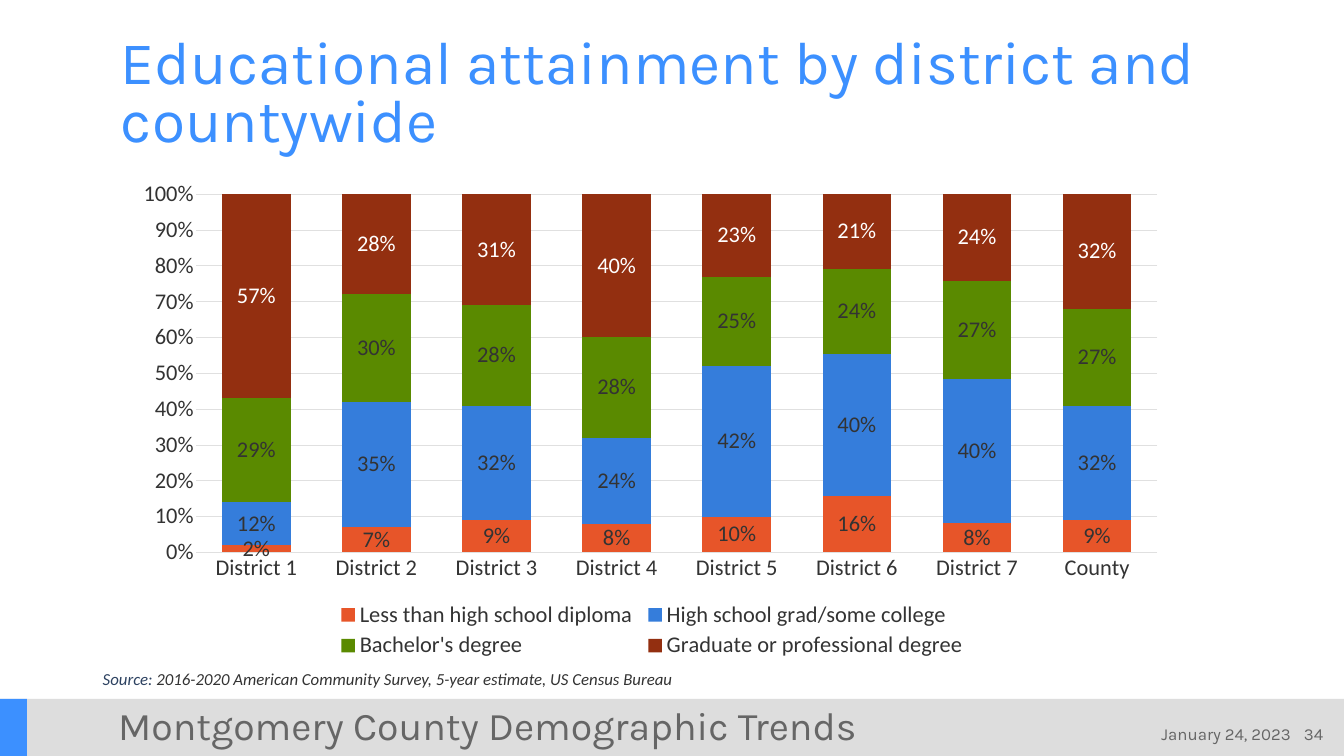
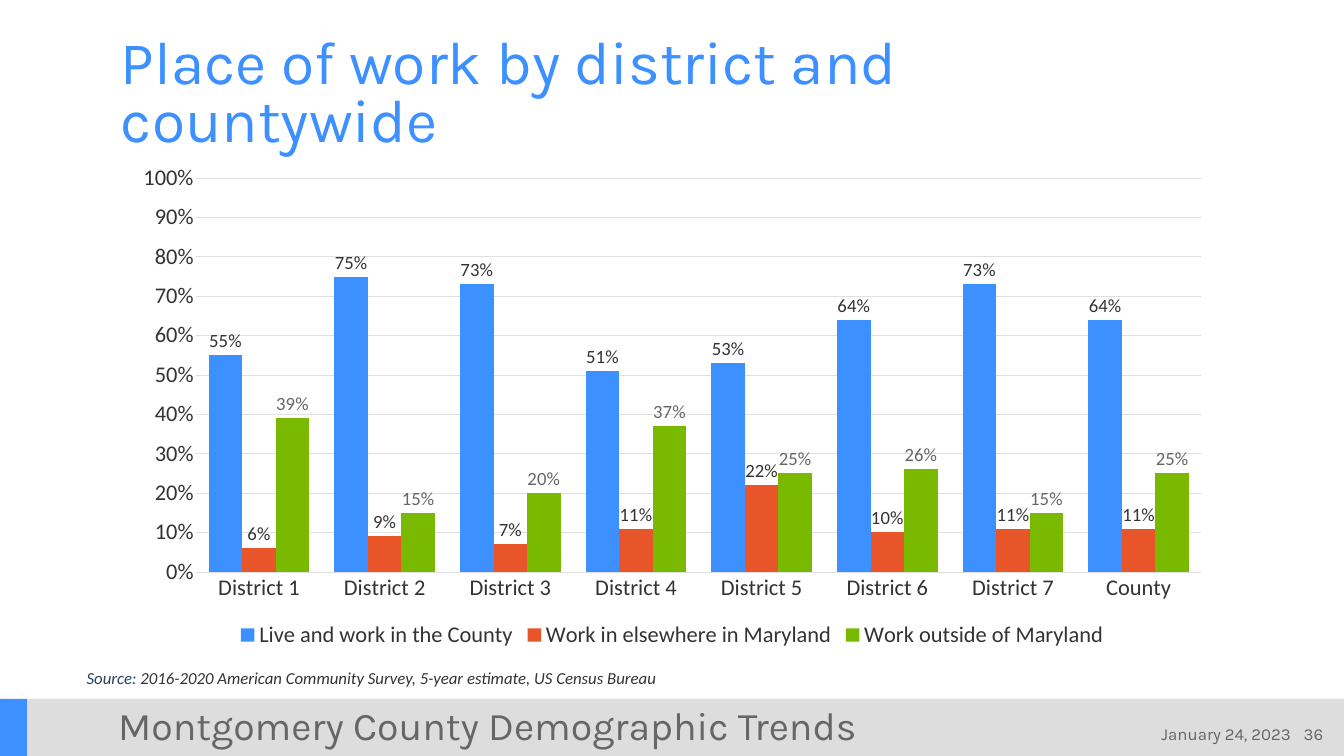
from dataclasses import dataclass

from lxml import etree
from pptx import Presentation
from pptx import util as u
from pptx.chart.data import CategoryChartData
from pptx.dml.color import RGBColor
from pptx.enum import chart as ch
from pptx.enum import shapes, text
from pptx.oxml.ns import qn

PX = 9144  # 100 px to the inch


@dataclass(frozen=True)
class Theme:
    heading_font: str = "Karla"
    body_font: str = "Calibri"
    blue: str = "3C90FF"
    steel: str = "357DDB"
    orange: str = "E75529"
    green: str = "5A8A00"
    lime: str = "79BA00"
    rust: str = "932F10"
    navy: str = "2D4261"
    ink: str = "333333"
    grey: str = "666666"
    band: str = "DDDDDD"
    rule: str = "E0E0E0"
    white: str = "FFFFFF"
    title_size: float = 64.8
    footer_size: int = 42
    chart_size: int = 24
    label_size: int = 20
    small_size: int = 18


DISTRICTS = [f"District {n}" for n in range(1, 8)] + ["County"]
FOOTER = "Montgomery County Demographic Trends"
DATE = "January 24, 2023"
SOURCE = "2016-2020 American Community Survey, 5-year estimate, US Census Bureau"


def px(*lengths):
    return [u.Emu(length * PX) for length in lengths]


def set_layout(parent, index, frame, area, inner=False):
    """Place a chart part at area, both rectangles in px on the slide."""
    for old in parent.findall(qn("c:layout")):
        parent.remove(old)
    layout = etree.Element(qn("c:layout"))
    manual = etree.SubElement(layout, qn("c:manualLayout"))
    if inner:
        etree.SubElement(manual, qn("c:layoutTarget"), val="inner")
    for side in "xy":
        etree.SubElement(manual, qn(f"c:{side}Mode"), val="edge")
    left, top, width, height = frame
    fractions = {
        "x": (area[0] - left) / width,
        "y": (area[1] - top) / height,
        "w": area[2] / width,
        "h": area[3] / height,
    }
    for name, value in fractions.items():
        etree.SubElement(manual, qn(f"c:{name}"), val=f"{value:.4f}")
    parent.insert(index, layout)


class Slides:
    def __init__(self, theme):
        self.theme = theme
        self.deck = Presentation()
        self.deck.slide_width, self.deck.slide_height = px(2000, 1125)
        self.page = None

    def style(self, font, size, color, face=None):
        font.name = face or self.theme.body_font
        font.size = u.Pt(size)
        font.color.rgb = RGBColor.from_string(color)

    def span(self, para, words, size, color, face=None, italic=None):
        span = para.add_run()
        span.text = words
        self.style(span.font, size, color, face)
        span.font.italic = italic

    def new_page(self, title, number):
        self.page = self.deck.slides.add_slide(self.deck.slide_layouts[5])
        self.title(title)
        self.footer(number)

    def title(self, words):
        box = self.page.shapes.title
        box.left, box.top, box.width, box.height = px(180, 50, 1640, 180)
        frame = box.text_frame
        frame.auto_size = text.MSO_AUTO_SIZE.NONE
        frame.word_wrap = True
        frame.vertical_anchor = text.MSO_ANCHOR.BOTTOM
        frame.margin_left, frame.margin_top, frame.margin_right, frame.margin_bottom = px(0, 5, 10, 0)
        para = frame.paragraphs[0]
        para.alignment = text.PP_ALIGN.LEFT
        para.line_spacing = 0.8
        self.span(para, words, self.theme.title_size, self.theme.blue, self.theme.heading_font)

    def band(self, area, color):
        band = self.page.shapes.add_shape(shapes.MSO_SHAPE.RECTANGLE, *px(*area))
        band.shadow.inherit = False
        band.fill.solid()
        band.fill.fore_color.rgb = RGBColor.from_string(color)
        band.line.fill.background()

    def footer_text(self, words, area, size, anchor, align):
        frame = self.page.shapes.add_textbox(*px(*area)).text_frame
        frame.word_wrap = True
        frame.margin_left = frame.margin_top = frame.margin_right = frame.margin_bottom = 0
        frame.vertical_anchor = anchor
        para = frame.paragraphs[0]
        para.alignment = align
        self.span(para, words, size, self.theme.grey, self.theme.heading_font)

    def footer(self, number):
        t = self.theme
        self.band((0, 1040, 2000, 85), t.band)
        self.band((0, 1040, 40, 85), t.blue)
        self.footer_text(FOOTER, (176, 1049, 1640, 60), t.footer_size,
                         text.MSO_ANCHOR.MIDDLE, text.PP_ALIGN.LEFT)
        for words, area in ((str(number), (1872, 1082, 97, 25)),
                            (DATE, (1640, 1082, 281, 25))):
            self.footer_text(words, area, t.small_size,
                             text.MSO_ANCHOR.BOTTOM, text.PP_ALIGN.RIGHT)

    def source(self, left, top, width):
        t = self.theme
        frame = self.page.shapes.add_textbox(*px(left, top, width, 71)).text_frame
        frame.word_wrap = True
        frame.auto_size = text.MSO_AUTO_SIZE.SHAPE_TO_FIT_TEXT
        para = frame.paragraphs[0]
        self.span(para, "Source: ", t.small_size, t.navy, italic=True)
        self.span(para, SOURCE, t.small_size, t.ink, italic=True)

    def chart(self, kind, frame, plot_area, series, label_size, label_place,
              overlap=0, legend_area=None):
        """Column chart; series holds (name, percentages, fill, label colour)."""
        t = self.theme
        data = CategoryChartData(number_format="0%")
        data.categories = DISTRICTS
        for name, percentages, _, _ in series:
            data.add_series(name, [value / 100 for value in percentages])
        chart = self.page.shapes.add_chart(kind, *px(*frame), data).chart
        self.style(chart.font, t.chart_size, t.ink)
        chart.has_title = False

        # Columns and their labels
        plot = chart.plots[0]
        plot.gap_width = 75
        plot.overlap = overlap
        plot.vary_by_categories = False
        for column, (_, _, fill, label_color) in zip(plot.series, series):
            column.format.fill.solid()
            column.format.fill.fore_color.rgb = RGBColor.from_string(fill)
            labels = column.data_labels
            labels.show_value = True
            labels.number_format = "0%"
            labels.number_format_is_linked = False
            labels.position = label_place
            self.style(labels.font, label_size, label_color)

        # Axes
        values, categories = chart.value_axis, chart.category_axis
        for axis in (values, categories):
            axis.major_tick_mark = axis.minor_tick_mark = ch.XL_TICK_MARK.NONE
            self.style(axis.tick_labels.font, t.chart_size, t.ink)
        values.minimum_scale, values.maximum_scale, values.major_unit = 0, 1, 0.1
        values.tick_labels.number_format = "0%"
        values.tick_labels.number_format_is_linked = False
        values.has_major_gridlines = True
        values.format.line.fill.background()
        for line in (values.major_gridlines.format.line, categories.format.line):
            line.color.rgb = RGBColor.from_string(t.rule)
            line.width = u.Pt(0.75)

        # Legend and plot area
        chart.has_legend = True
        chart.legend.position = ch.XL_LEGEND_POSITION.BOTTOM
        chart.legend.include_in_layout = False
        self.style(chart.legend.font, t.chart_size, t.ink)
        plot_part = chart._chartSpace.find(f".//{qn('c:plotArea')}")
        set_layout(plot_part, 0, frame, plot_area, inner=True)
        if legend_area:
            legend_part = chart._chartSpace.find(f".//{qn('c:legend')}")
            set_layout(legend_part, 1, frame, legend_area)


def main():
    theme = Theme()
    slides = Slides(theme)

    # Educational attainment
    slides.new_page("Educational attainment by district and countywide", 34)
    slides.chart(
        ch.XL_CHART_TYPE.COLUMN_STACKED_100,
        frame=(180, 254, 1573, 736),
        plot_area=(292, 289, 1430, 533),
        legend_area=(495, 890, 950, 96),
        series=[
            ("Less than high school diploma", (2, 7, 9, 8, 10, 16, 8, 9), theme.orange, theme.ink),
            ("High school grad/some college", (12, 35, 32, 24, 42, 40, 40, 32), theme.steel, theme.ink),
            ("Bachelor's degree", (29, 30, 28, 28, 25, 24, 27, 27), theme.green, theme.ink),
            ("Graduate or professional degree", (57, 28, 31, 40, 23, 21, 24, 32), theme.rust, theme.white),
        ],
        label_size=theme.chart_size,
        label_place=ch.XL_LABEL_POSITION.CENTER,
        overlap=100,
    )
    slides.source(143, 990, 917)

    # Place of work
    slides.new_page("Place of work by district and countywide", 36)
    slides.chart(
        ch.XL_CHART_TYPE.COLUMN_CLUSTERED,
        frame=(180, 230, 1640, 742),
        plot_area=(292, 265, 1496, 586),
        series=[
            ("Live and work in the County", (55, 75, 73, 51, 53, 64, 73, 64), theme.blue, theme.ink),
            ("Work in elsewhere in Maryland", (6, 9, 7, 11, 22, 10, 11, 11), theme.orange, theme.ink),
            ("Work outside of Maryland", (39, 15, 20, 37, 25, 26, 15, 25), theme.lime, theme.grey),
        ],
        label_size=theme.label_size,
        label_place=ch.XL_LABEL_POSITION.OUTSIDE_END,
    )
    slides.source(119, 989, 923)

    slides.deck.save("out.pptx")


if __name__ == "__main__":
    main()
